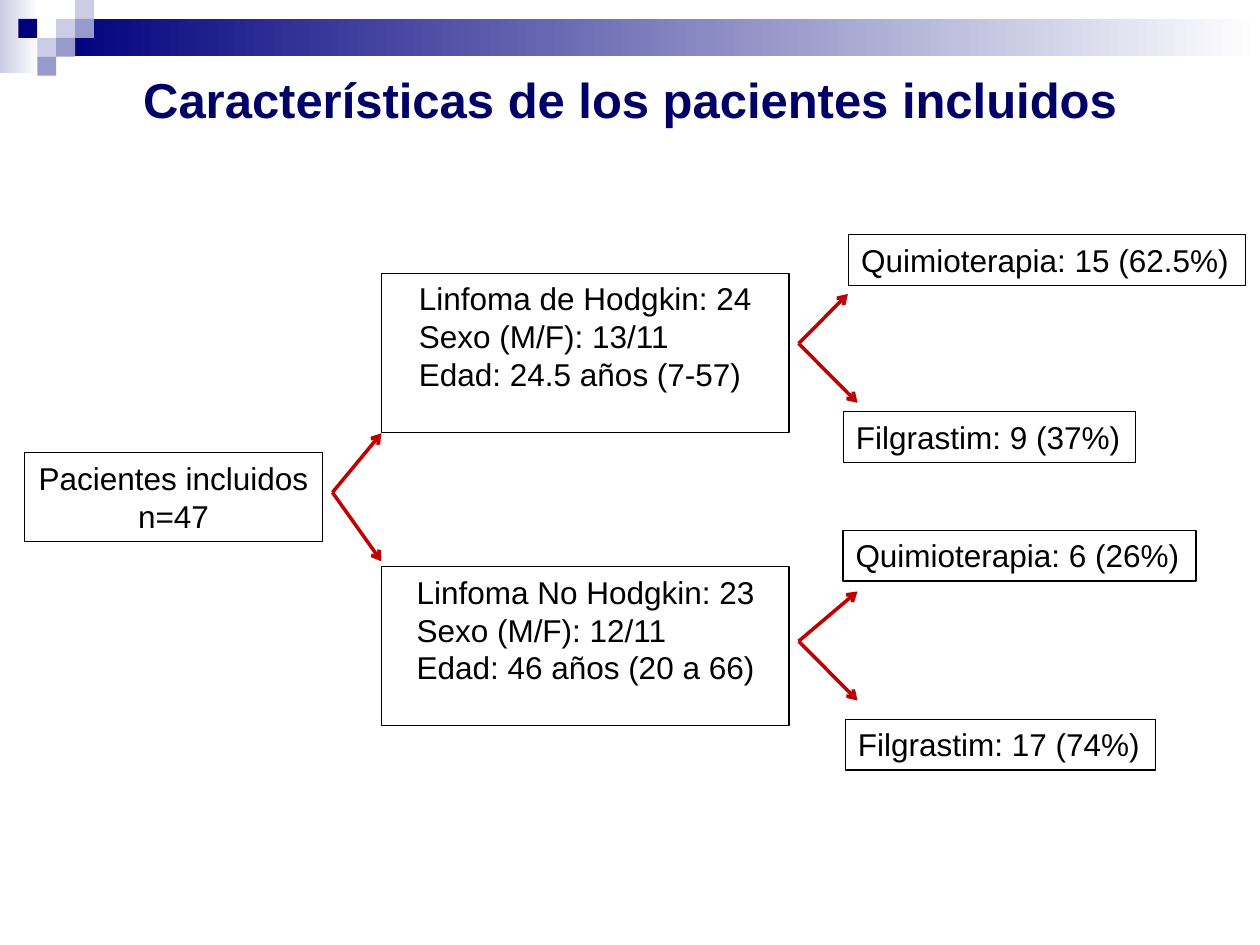
from lxml import etree
from pptx import Presentation
from pptx.dml.color import RGBColor
from pptx.enum.shapes import MSO_CONNECTOR, MSO_SHAPE
from pptx.enum.text import MSO_ANCHOR, PP_ALIGN
from pptx.oxml.ns import qn
from pptx.util import Pt

RECTANGLE = MSO_SHAPE.RECTANGLE
STRAIGHT = MSO_CONNECTOR.STRAIGHT
TOP, MIDDLE = MSO_ANCHOR.TOP, MSO_ANCHOR.MIDDLE
LEFT, CENTER = PP_ALIGN.LEFT, PP_ALIGN.CENTER

COLORS = {
    "navy": "00007D", "pale": "CCCCE6", "lilac": "9999CC", "white": "FFFFFF",
    "title": "000066", "text": "000000", "arrow": "C00000",
}
FONT = "Arial"
TITLE = "Características de los pacientes incluidos"
TITLE_FRAME = (36, 36, 648, 41)

BANDS = [((0, 0, 22.3, 41.8), "pale"), ((32.4, 10.8, 687.6, 21.4), "navy")]
TILE = 10.8
TILES = [
    (3, 1, "pale"), (4, 0, "pale"), (4, 1, "lilac"), (2, 2, "pale"),
    (1, 1, "navy"), (3, 2, "lilac"), (2, 3, "lilac"),
]
TILE_OFFSET = -0.3

GROUP_SIZE = (232.8, 91)
BRANCH_HEIGHT = 29.1
BOXES = [
    ((14, 258.6, 170.2, 51), CENTER, 7.2, ["Pacientes incluidos", "n=47"]),
    ((218, 156.2, *GROUP_SIZE), LEFT, 21.4,
     ["Linfoma de Hodgkin: 24", "Sexo (M/F): 13/11", "Edad: 24.5 años (7-57)"]),
    ((218, 323.8, *GROUP_SIZE), LEFT, 20,
     ["Linfoma No Hodgkin: 23", "Sexo (M/F): 12/11", "Edad: 46 años (20 a 66)"]),
    ((485, 134, 226.8, BRANCH_HEIGHT), LEFT, 7.2, ["Quimioterapia: 15 (62.5%)"]),
    ((482, 235.2, 167, BRANCH_HEIGHT), LEFT, 7.2, ["Filgrastim: 9 (37%)"]),
    ((481.8, 303, 201.6, BRANCH_HEIGHT), LEFT, 7.2, ["Quimioterapia: 6 (26%)"]),
    ((483.2, 411, 177, BRANCH_HEIGHT), LEFT, 7.2, ["Filgrastim: 17 (74%)"]),
]
FORKS = [
    ((190, 281.4), [(218, 247.6), (218, 320.8)]),
    ((456.4, 196.3), [(484.5, 168), (490, 230.2)]),
    ((456.4, 366.4), [(490, 400.3), (490, 338)]),
]


def color(name):
    return RGBColor.from_string(COLORS[name])


def add_rectangle(page, frame):
    box = page.shapes.add_shape(RECTANGLE, *map(Pt, frame))
    box.shadow.inherit = False
    return box


def add_band(page, frame, start):
    band = add_rectangle(page, frame)
    band.line.fill.background()
    band.fill.gradient()
    band.fill.gradient_angle = 0
    for stop, name in zip(band.fill.gradient_stops, (start, "white")):
        stop.color.rgb = color(name)


def add_tile(page, column, row, fill):
    tile = add_rectangle(page, (column * TILE + TILE_OFFSET, row * TILE, TILE, TILE))
    tile.line.fill.background()
    tile.fill.solid()
    tile.fill.fore_color.rgb = color(fill)


def write(box, lines, align, tint, frame_format, font_format):
    frame = box.text_frame
    for name, value in frame_format.items():
        setattr(frame, name, value)
    for index, line in enumerate(lines):
        para = frame.add_paragraph() if index else frame.paragraphs[0]
        para.alignment = align
        span = para.add_run()
        span.text = line
        span.font.color.rgb = color(tint)
        for name, value in font_format.items():
            setattr(span.font, name, value)


def add_box(page, frame, align, inset, lines):
    box = add_rectangle(page, frame)
    box.fill.background()
    box.line.color.rgb = color("text")
    box.line.width = Pt(0.75)
    frame_format = {
        "word_wrap": True, "vertical_anchor": TOP, "margin_left": Pt(inset),
        "margin_right": Pt(7), "margin_top": Pt(3.6), "margin_bottom": Pt(0),
    }
    write(box, lines, align, "text", frame_format, {"name": FONT, "size": Pt(18)})


def add_arrow(page, start, end):
    arrow = page.shapes.add_connector(STRAIGHT, *map(Pt, start + end))
    arrow.line.color.rgb = color("arrow")
    arrow.line.width = Pt(2)
    etree.SubElement(arrow.line._get_or_add_ln(), qn("a:tailEnd"), type="arrow")
    etree.SubElement(arrow._element.spPr, qn("a:effectLst"))


def main():
    deck = Presentation()
    deck.slide_width, deck.slide_height = Pt(720), Pt(540)
    page = deck.slides.add_slide(deck.slide_layouts[6])
    for band in BANDS:
        add_band(page, *band)
    for tile in TILES:
        add_tile(page, *tile)
    title = page.shapes.add_textbox(*map(Pt, TITLE_FRAME))
    write(title, [TITLE], CENTER, "title",
          {"word_wrap": True, "vertical_anchor": MIDDLE},
          {"name": FONT, "size": Pt(28), "bold": True})
    for box in BOXES:
        add_box(page, *box)
    for start, ends in FORKS:
        for end in ends:
            add_arrow(page, start, end)
    deck.save("out.pptx")


if __name__ == "__main__":
    main()
